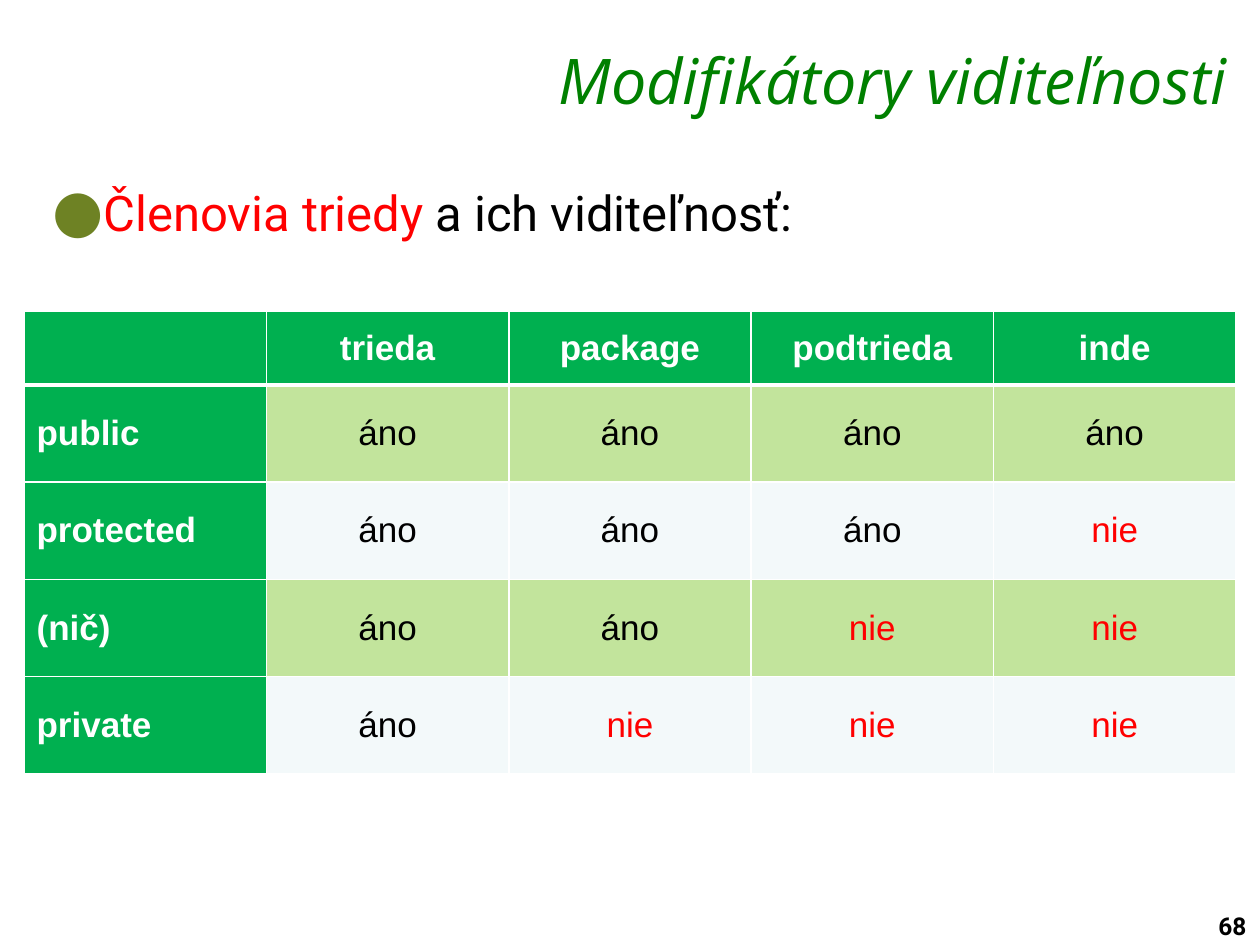
from dataclasses import dataclass

from lxml import etree
from pptx import Presentation
from pptx.dml.color import RGBColor
from pptx.enum.text import MSO_ANCHOR, PP_ALIGN
from pptx.oxml.ns import qn
from pptx.util import Emu, Pt

LEFT, MID, RIGHT = PP_ALIGN.LEFT, PP_ALIGN.CENTER, PP_ALIGN.RIGHT
TOP, CENTER = MSO_ANCHOR.TOP, MSO_ANCHOR.MIDDLE
SCALE = 914400 / 126
TITLE_ONLY = 5


@dataclass(frozen=True)
class Theme:
    black: str = "000000"
    white: str = "FFFFFF"
    red: str = "FF0000"
    title: str = "008000"
    dot: str = "6E8224"
    head: str = "00B050"
    bands: tuple = ("C2E49C", "F3F9FA")
    title_font: str = "Open Sans"
    body_font: str = "Roboto"
    cell_font: str = "Arial"
    title_size: int = 36
    body_size: int = 28
    cell_size: int = 20
    page_size: int = 14


THEME = Theme()


def px(n):
    return Emu(round(n * SCALE))


def write(para, text, font, size, color, bold=False, italic=False, align=LEFT):
    """Add one formatted run to a paragraph."""
    para.alignment = align
    run = para.add_run()
    run.text = text
    face = run.font
    face.name, face.size = font, Pt(size)
    face.bold, face.italic = bold, italic
    face.color.rgb = RGBColor.from_string(color)


def node(parent, tag, **attrs):
    item = etree.SubElement(parent, qn(tag))
    for key, value in attrs.items():
        item.set(key, str(value))
    return item


def add_bullet(para, mark, color, percent, indent):
    props = para._p.get_or_add_pPr()
    props.set("marL", str(indent))
    props.set("indent", str(-indent))
    node(node(props, "a:buClr"), "a:srgbClr", val=color)
    node(props, "a:buSzPct", val=percent * 1000)
    node(props, "a:buFont", typeface=THEME.body_font)
    node(props, "a:buChar", char=mark)


def edge(cell, heavy):
    """White cell borders; heavy names the sides drawn at 3 pt."""
    props = cell._tc.get_or_add_tcPr()
    for spot, side in enumerate("LRTB"):
        width = Pt(3 if side in heavy else 1)
        line = node(props, f"a:ln{side}", w=width)
        node(node(line, "a:solidFill"), "a:srgbClr", val=THEME.white)
        props.insert(spot, line)


def add_title(slide, box, text):
    shape = slide.shapes.title
    shape.left, shape.top, shape.width, shape.height = map(px, box)
    frame = shape.text_frame
    frame.vertical_anchor = TOP
    frame.margin_top = px(3)
    write(frame.paragraphs[0], text, THEME.title_font, THEME.title_size,
          THEME.title, italic=True, align=RIGHT)


def add_body(slide, box, parts):
    frame = slide.shapes.add_textbox(*map(px, box)).text_frame
    frame.word_wrap = True
    para = frame.paragraphs[0]
    add_bullet(para, "●", THEME.dot, 120, px(49))
    for text, color in parts:
        write(para, text, THEME.body_font, THEME.body_size, color)


def add_grid(slide, box, rows):
    left, top, width, height = box
    count = len(rows[0])
    table = slide.shapes.add_table(len(rows), count, *map(px, box)).table
    for col in table.columns:
        col.width = px(width / count)
    # Header row is lower; the others share the remaining height
    head = 74
    for r, row in enumerate(table.rows):
        row.height = px((height - head) / (len(rows) - 1) if r else head)
    for r, texts in enumerate(rows):
        for c, text in enumerate(texts):
            cell = table.cell(r, c)
            label = r == 0 or c == 0
            fill = THEME.head if label else THEME.bands[(r - 1) % 2]
            cell.fill.solid()
            cell.fill.fore_color.rgb = RGBColor.from_string(fill)
            cell.vertical_anchor = CENTER
            edge(cell, "B" if r == 0 else "T" if r == 1 else "")
            if text:
                plain = THEME.red if text == "nie" else THEME.black
                write(cell.text_frame.paragraphs[0], text, THEME.cell_font,
                      THEME.cell_size, THEME.white if label else plain,
                      bold=label, align=MID if c else LEFT)


def add_page(slide, box, text):
    frame = slide.shapes.add_textbox(*map(px, box)).text_frame
    frame.word_wrap = False
    write(frame.paragraphs[0], text, THEME.body_font, THEME.page_size,
          THEME.black, bold=True)


def main():
    deck = Presentation()
    deck.slide_width, deck.slide_height = px(1260), px(945)
    slide = deck.slides.add_slide(deck.slide_layouts[TITLE_ONLY])

    add_title(slide, (289, 39, 951, 73), "Modifikátory viditeľnosti")
    add_body(slide, (40, 176, 1182, 731),
             [("Členovia triedy ", THEME.red),
              ("a ich viditeľnosť:", THEME.black)])

    # Visibility: each modifier reaches a number of places in order
    places = ["trieda", "package", "podtrieda", "inde"]
    reach = {"public": 4, "protected": 3, "(nič)": 2, "private": 1}
    rows = [["", *places]]
    for name, n in reach.items():
        rows.append([name] + ["áno"] * n + ["nie"] * (len(places) - n))
    add_grid(slide, (24, 311, 1212, 463), rows)

    add_page(slide, (1206, 905, 64, 42), "68")
    deck.save("out.pptx")


if __name__ == "__main__":
    main()
